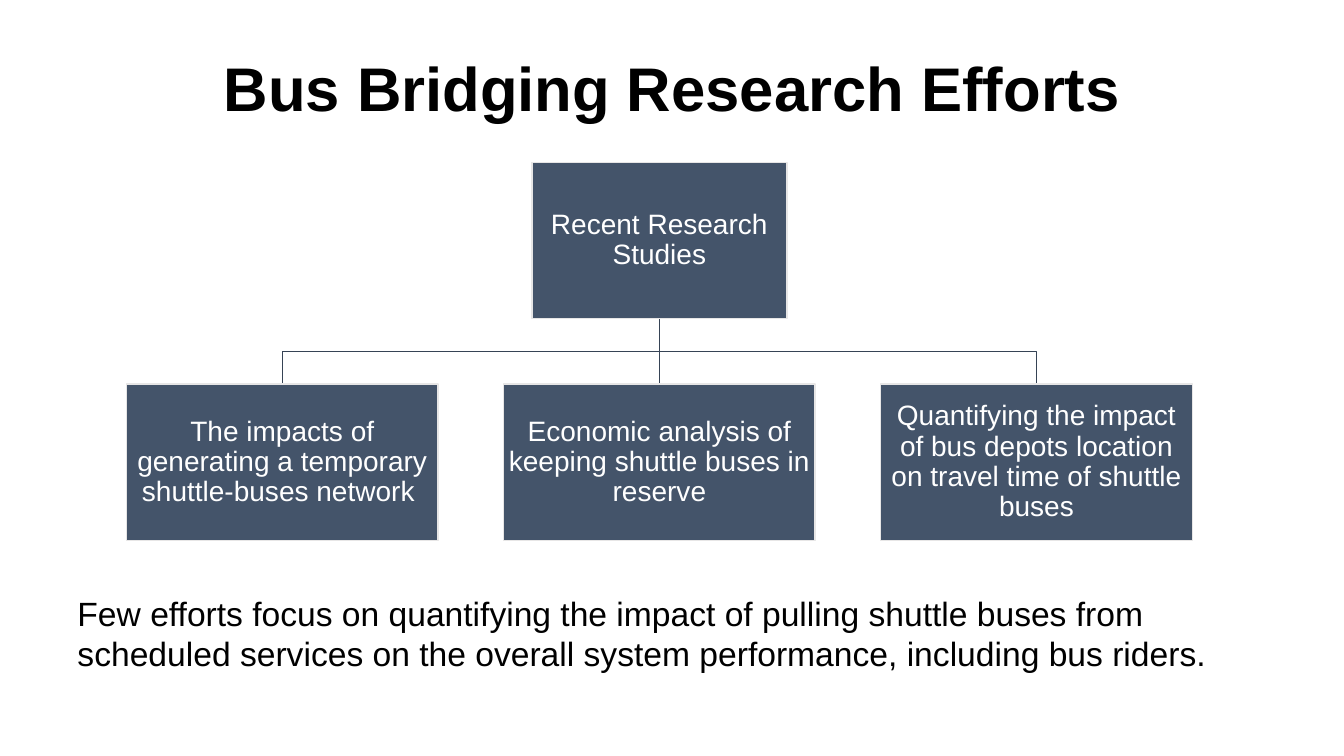
"""Build the slide on bus bridging research efforts."""
from lxml import etree
from pptx import Presentation
from pptx.dml.color import RGBColor
from pptx.enum.shapes import MSO_CONNECTOR, MSO_SHAPE
from pptx.enum.text import MSO_ANCHOR, PP_ALIGN
from pptx.oxml.ns import qn
from pptx.util import Inches, Pt

RECT = MSO_SHAPE.RECTANGLE
STRAIGHT = MSO_CONNECTOR.STRAIGHT
MIDDLE = MSO_ANCHOR.MIDDLE
TOP = MSO_ANCHOR.TOP
CENTER = PP_ALIGN.CENTER
LEFT = PP_ALIGN.LEFT
BLACK = RGBColor(0x00, 0x00, 0x00)
WHITE = RGBColor(0xFF, 0xFF, 0xFF)
SLATE = RGBColor(0x44, 0x54, 0x6A)
NAVY = RGBColor(0x36, 0x43, 0x55)
PALE = RGBColor(0xE7, 0xE6, 0xE6)


def write(shape, text, size, color, align, anchor, spacing=0.9, bold=False):
    frame = shape.text_frame
    frame.word_wrap = True
    frame.vertical_anchor = anchor
    para = frame.paragraphs[0]
    para.alignment = align
    para.line_spacing = spacing
    run = para.add_run()
    run.text = text
    run.font.name = "Arial"
    run.font.size = Pt(size)
    run.font.bold = bold
    run.font.color.rgb = color


def add_box(mid, top, width, text):
    box = slide.shapes.add_shape(
        RECT, Inches(mid - width / 2), Inches(top), Inches(width), Inches(HIGH))
    box.shadow.inherit = False
    box.fill.solid()
    box.fill.fore_color.rgb = SLATE
    box.line.color.rgb = PALE
    box.line.width = Pt(1)
    frame = box.text_frame
    frame.margin_left = frame.margin_right = Inches(0.01)
    frame.margin_top = frame.margin_bottom = Inches(0.01)
    write(box, text, 20, WHITE, CENTER, MIDDLE)


prs = Presentation()
prs.slide_width = Inches(13.33)
prs.slide_height = Inches(7.5)
slide = prs.slides.add_slide(prs.slide_layouts[6])

title = slide.shapes.add_textbox(Inches(0.92), Inches(0.18), Inches(11.5), Inches(1.45))
write(title, "Bus Bridging Research Efforts", 44, BLACK, CENTER, MIDDLE, bold=True)

HIGH = 1.55
ROOT_TOP = 1.61
LEAF_TOP = 3.81
ROOT_END = ROOT_TOP + HIGH
BEND = (ROOT_END + LEAF_TOP) / 2
AXIS = 6.54
STEP = 3.74
STUDIES = [
    "The impacts of generating a temporary shuttle-buses network ",
    "Economic analysis of keeping shuttle buses in reserve",
    "Quantifying the impact of bus depots location on travel time of shuttle buses",
]

for mid in (AXIS + STEP, AXIS - STEP):
    path = slide.shapes.build_freeform(Inches(AXIS), Inches(ROOT_END))
    path.add_line_segments(
        [(Inches(x), Inches(y)) for x, y in ((AXIS, BEND), (mid, BEND), (mid, LEAF_TOP))],
        close=False)
    branch = path.convert_to_shape()
    branch.shadow.inherit = False
    branch.fill.background()
    branch.line.color.rgb = NAVY
    branch.line.width = Pt(1)

stem = slide.shapes.add_connector(
    STRAIGHT, Inches(AXIS), Inches(ROOT_END), Inches(AXIS), Inches(LEAF_TOP))
stem.line.color.rgb = NAVY
stem.line.width = Pt(1)
etree.SubElement(stem._element.spPr, qn("a:effectLst"))

add_box(AXIS, ROOT_TOP, 2.53, "Recent Research Studies")
for i, study in enumerate(STUDIES):
    add_box(AXIS + (i - 1) * STEP, LEAF_TOP, 3.09, study)

note = slide.shapes.add_textbox(Inches(0.67), Inches(5.83), Inches(11.75), Inches(0.91))
write(note, "Few efforts focus on quantifying the impact of pulling shuttle buses from "
      "scheduled services on the overall system performance, including bus riders.",
      24, BLACK, LEFT, TOP, spacing=1.0)

prs.save("out.pptx")
